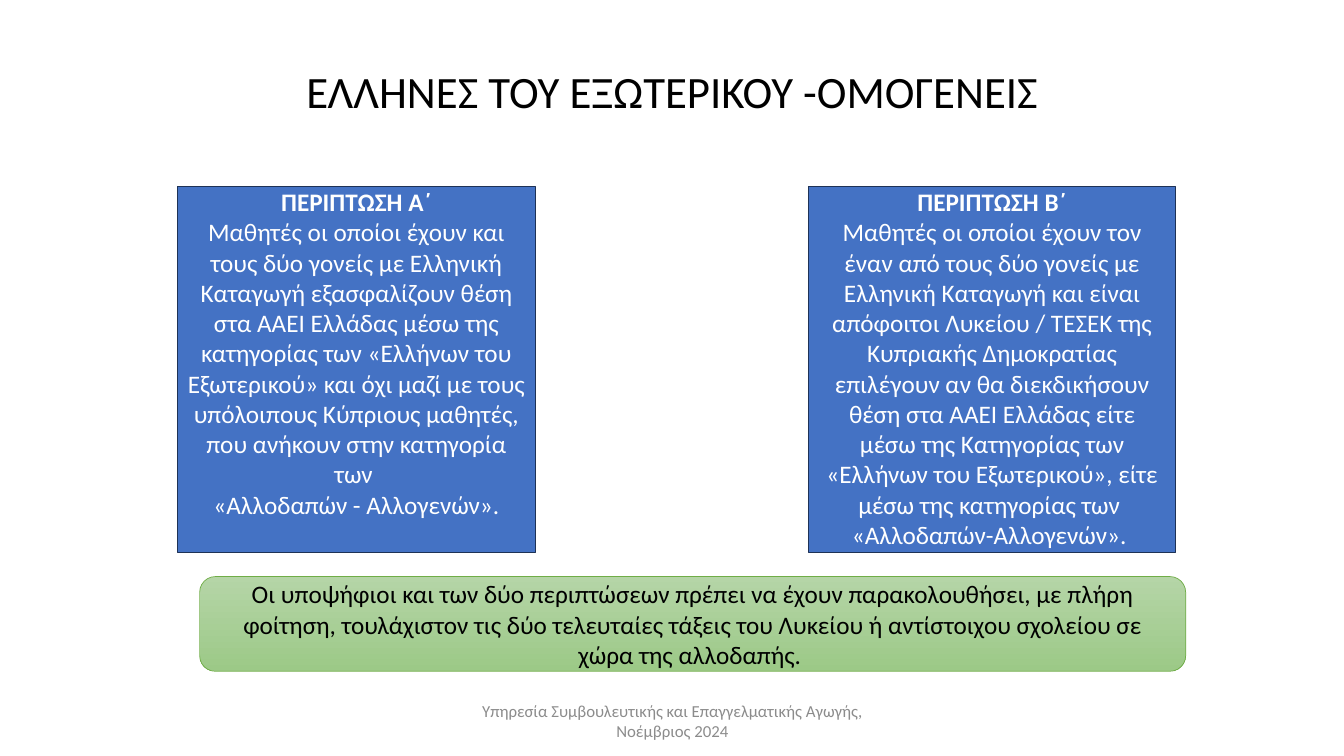
"""Build the slide on the two cases of Greeks living abroad."""
from dataclasses import dataclass

from pptx import Presentation
from pptx.dml.color import RGBColor
from pptx.enum.shapes import MSO_SHAPE
from pptx.enum.text import MSO_ANCHOR, MSO_AUTO_SIZE, PP_ALIGN
from pptx.util import Inches, Pt

COLORS = {
    "black": "000000", "white": "FFFFFF", "gray": "8C8C8C",
    "blue": "4472C4", "navy": "1E3256",
    "green": "70AD47", "green_top": "B5D5A7", "green_bottom": "9CC987",
}


@dataclass
class Case:
    """One case box with its heading and paragraphs."""
    left: float
    width: float
    heading: str
    body: list[str]


CASES = [
    Case(1.76, 3.55, "ΠΕΡΙΠΤΩΣΗ Α΄", [
        "Μαθητές οι οποίοι έχουν και τους δύο γονείς με Ελληνική Καταγωγή "
        "εξασφαλίζουν θέση στα ΑΑΕΙ Ελλάδας μέσω της κατηγορίας των «Ελλήνων του "
        "Εξωτερικού» και όχι μαζί με τους υπόλοιπους Κύπριους μαθητές, που ανήκουν "
        "στην κατηγορία των ",
        "«Αλλοδαπών - Αλλογενών».",
    ]),
    Case(8.02, 3.64, "ΠΕΡΙΠΤΩΣΗ B΄", [
        "Μαθητές οι οποίοι έχουν τον έναν από τους δύο γονείς με Ελληνική Καταγωγή "
        "και είναι απόφοιτοι Λυκείου / ΤΕΣΕΚ της Κυπριακής Δημοκρατίας επιλέγουν αν "
        "θα διεκδικήσουν θέση στα ΑΑΕΙ Ελλάδας είτε μέσω της Κατηγορίας των «Ελλήνων "
        "του Εξωτερικού», είτε μέσω της κατηγορίας των ",
        "«Αλλοδαπών-Αλλογενών». ",
    ]),
]


def rgb(name: str) -> RGBColor:
    """Return the named colour."""
    return RGBColor.from_string(COLORS[name])


def add_text(tf, text: str, *, size: float = 18, color: str = "black",
             bold: bool = False, spacing: float = 1.0) -> None:
    """Add a centred paragraph, filling the first one while it is empty."""
    p = tf.paragraphs[0] if not tf.text else tf.add_paragraph()
    p.alignment = PP_ALIGN.CENTER
    p.line_spacing = spacing
    r = p.add_run()
    r.text = text
    r.font.name = "Calibri"
    r.font.size = Pt(size)
    r.font.bold = bold
    r.font.color.rgb = rgb(color)


def prepare_frame(sp, anchor: MSO_ANCHOR = MSO_ANCHOR.MIDDLE):
    """Return the wrapped, fixed-size text frame of a shape."""
    tf = sp.text_frame
    tf.word_wrap = True
    tf.auto_size = MSO_AUTO_SIZE.NONE
    tf.vertical_anchor = anchor
    return tf


def add_title(s, text: str) -> None:
    """Place and fill the title placeholder."""
    sp = s.shapes.title
    sp.left, sp.top, sp.width, sp.height = map(Inches, (0.92, 0.21, 11.5, 1.45))
    add_text(prepare_frame(sp), text, size=32, spacing=0.9)


def add_case(s, case: Case) -> None:
    """Draw one blue case box."""
    sp = s.shapes.add_shape(MSO_SHAPE.RECTANGLE, Inches(case.left), Inches(1.85),
                            Inches(case.width), Inches(3.63))
    sp.shadow.inherit = False
    sp.fill.solid()
    sp.fill.fore_color.rgb = rgb("blue")
    sp.line.color.rgb = rgb("navy")
    sp.line.width = Pt(1)
    tf = prepare_frame(sp, MSO_ANCHOR.TOP)
    tf.margin_top = tf.margin_bottom = 0
    add_text(tf, case.heading, color="white", bold=True)
    for text in case.body:
        add_text(tf, text, color="white")


def add_requirement(s, text: str) -> None:
    """Draw the green box with the shared requirement."""
    sp = s.shapes.add_shape(MSO_SHAPE.ROUNDED_RECTANGLE, Inches(1.98), Inches(5.72),
                            Inches(9.78), Inches(0.94))
    sp.shadow.inherit = False
    sp.fill.gradient()
    sp.fill.gradient_angle = 270
    for stop, color in zip(sp.fill.gradient_stops, ("green_top", "green_bottom")):
        stop.color.rgb = rgb(color)
    sp.line.color.rgb = rgb("green")
    sp.line.width = Pt(0.5)
    add_text(prepare_frame(sp), text)


def add_footer(s, text: str) -> None:
    """Add the footer text."""
    sp = s.shapes.add_textbox(Inches(4.42), Inches(6.95), Inches(4.5), Inches(0.4))
    add_text(prepare_frame(sp), text, size=12, color="gray")


def main() -> None:
    """Build and save the presentation."""
    prs = Presentation()
    prs.slide_width, prs.slide_height = Inches(13.33), Inches(7.5)
    s = prs.slides.add_slide(prs.slide_layouts.get_by_name("Title Only"))
    add_title(s, "ΕΛΛΗΝΕΣ ΤΟΥ ΕΞΩΤΕΡΙΚΟΥ -ΟΜΟΓΕΝΕΙΣ")
    add_footer(s, "Υπηρεσία Συμβουλευτικής και Επαγγελματικής Αγωγής, Νοέμβριος 2024")
    for case in CASES:
        add_case(s, case)
    add_requirement(s, "Οι υποψήφιοι και των δύο περιπτώσεων πρέπει να έχουν "
                       "παρακολουθήσει, με πλήρη φοίτηση, τουλάχιστον τις δύο "
                       "τελευταίες τάξεις του Λυκείου ή αντίστοιχου σχολείου σε "
                       "χώρα της αλλοδαπής. ")
    prs.save("out.pptx")


if __name__ == "__main__":
    main()
